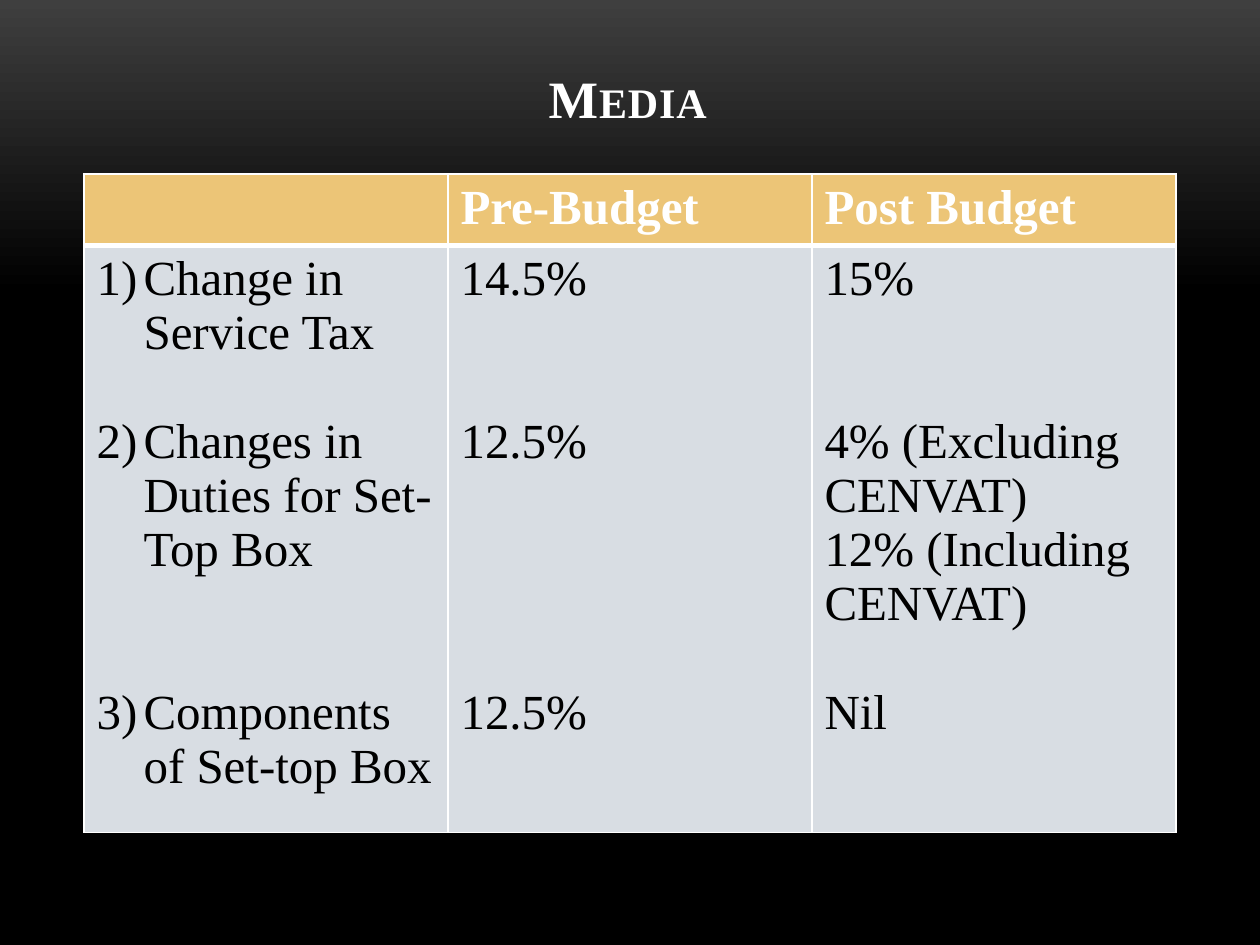
from dataclasses import dataclass

from lxml import etree
from pptx import Presentation
from pptx import util as u
from pptx.dml.color import RGBColor
from pptx.enum import text
from pptx.oxml.ns import qn


@dataclass(frozen=True)
class Theme:
    """Colours, font and type sizes in points."""
    font: str = "Times New Roman"
    title: int = 30
    body: int = 28
    line: int = 31
    white: str = "FFFFFF"
    black: str = "000000"
    glow: str = "3F3F3F"
    header: str = "ECC577"
    cell: str = "D8DDE3"


T = Theme()
HEADERS = ["", "Pre-Budget", "Post Budget"]
COLUMNS = [
    [(0, "Change in Service Tax"), (1, "Changes in Duties for Set-Top Box"),
     (2, "Components of Set-top Box")],
    [(0, "14.5%"), (2, "12.5%"), (4, "12.5%")],
    [(0, "15%"), (2, "4% (Excluding CENVAT)"), (0, "12% (Including CENVAT)"), (1, "Nil")],
]


def px(n):
    """Turn px into EMU at 126 px to the inch."""
    return u.Emu(round(n * 914400 / 126))


def style(p, size, color, bold=False):
    """Format every run of a paragraph."""
    for r in p.runs:
        r.font.name, r.font.size, r.font.bold = T.font, u.Pt(size), bold
        r.font.color.rgb = RGBColor.from_string(color)


def paint_background(s):
    """Fade the slide from grey at the top to black."""
    fill = s.background.fill
    fill.gradient()
    fill.gradient_angle = 270
    for stop, (position, color) in zip(fill.gradient_stops, [(0, T.glow), (0.31, T.black)]):
        stop.position = position
        stop.color.rgb = RGBColor.from_string(color)


def add_title(s, title, x, y, w, h):
    """Place the small-caps title one line above the bottom of its box."""
    sp = s.shapes.add_textbox(px(x), px(y), px(w), px(h))
    tf = sp.text_frame
    tf.word_wrap = True
    tf.vertical_anchor = text.MSO_ANCHOR.BOTTOM
    tf.margin_bottom = px(66)
    tf.text = title
    p = tf.paragraphs[0]
    p.alignment = text.PP_ALIGN.CENTER
    style(p, T.title, T.white, bold=True)
    for r in p.runs:
        rPr = r.font._element
        rPr.set("cap", "small")
        rPr.set("spc", "50")


def style_cell(cell, fill, **widths):
    """Draw white cell borders with widths in points, then fill the cell."""
    tcPr = cell._tc.get_or_add_tcPr()
    for side in "LRTB":
        ln = etree.SubElement(tcPr, qn(f"a:ln{side}"), w=str(u.Pt(widths.get(side, 1))))
        solid = etree.SubElement(ln, qn("a:solidFill"))
        etree.SubElement(solid, qn("a:srgbClr"), val=T.white)
    cell.fill.solid()
    cell.fill.fore_color.rgb = RGBColor.from_string(fill)


def number(p):
    """Give a paragraph a hanging automatic number."""
    pPr = p._p.get_or_add_pPr()
    pPr.set("marL", str(px(47)))
    pPr.set("indent", str(-px(47)))
    etree.SubElement(pPr, qn("a:buFont"), typeface="+mj-lt")
    etree.SubElement(pPr, qn("a:buAutoNum"), type="arabicParenR")


def fill_body(cell, items, numbered):
    """Write the items, each after its gap counted in lines."""
    tf = cell.text_frame
    for i, (gap, item) in enumerate(items):
        p = tf.add_paragraph() if i else tf.paragraphs[0]
        p.text = item
        if numbered:
            number(p)
        if gap:
            p.space_before = u.Pt(gap * T.line)
        style(p, T.body, T.black)


def add_budget_table(s, x, y, w, header_h, body_h):
    """Place the comparison table with equal columns."""
    frame = s.shapes.add_table(2, len(HEADERS), px(x), px(y), px(w), px(header_h + body_h))
    tbl = frame.table
    tbl.horz_banding = False
    tbl.rows[0].height, tbl.rows[1].height = px(header_h), px(body_h)
    for i, (header, items) in enumerate(zip(HEADERS, COLUMNS)):
        tbl.columns[i].width = px(w / len(HEADERS))
        top, body = tbl.cell(0, i), tbl.cell(1, i)
        style_cell(top, T.header, B=3)
        style_cell(body, T.cell, T=3)
        if header:
            top.text_frame.text = header
            style(top.text_frame.paragraphs[0], T.body, T.white, bold=True)
        fill_body(body, items, numbered=i == 0)


def main():
    """Build the slide and save it."""
    prs = Presentation()
    prs.slide_width, prs.slide_height = px(1260), px(945)
    s = prs.slides.add_slide(prs.slide_layouts[6])
    paint_background(s)
    add_title(s, "Media", 84, 38, 1092, 157)
    add_budget_table(s, 84, 174, 1092, 67, 555)
    prs.save("out.pptx")


if __name__ == "__main__":
    main()
